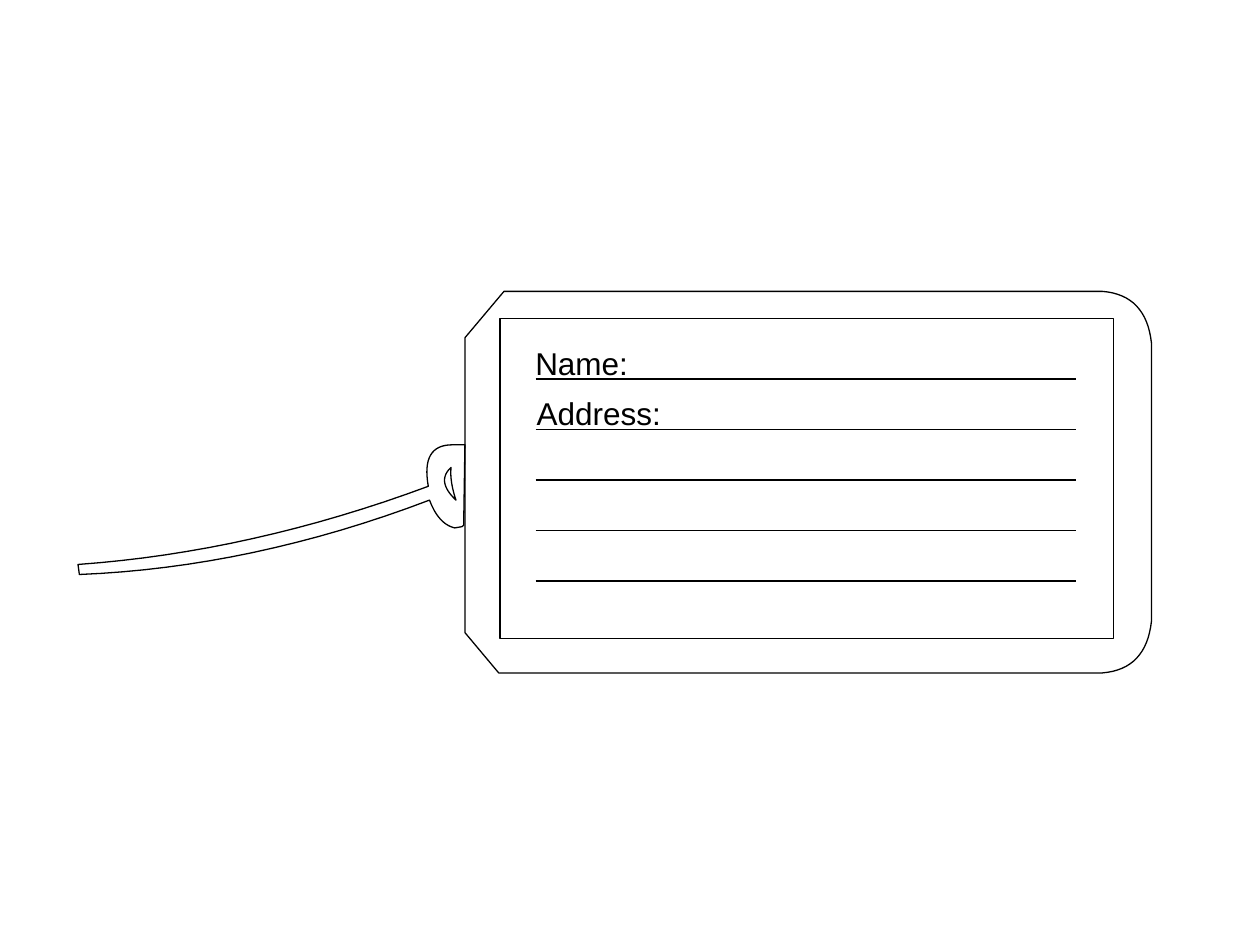
from lxml.etree import SubElement
from pptx import Presentation
from pptx.dml.color import RGBColor
from pptx.enum.shapes import MSO_CONNECTOR, MSO_SHAPE
from pptx.enum.text import MSO_AUTO_SIZE
from pptx.oxml.ns import qn
from pptx.util import Pt

INK = "000000"
HAIRLINE = 0
RULE_LEFT, RULE_RIGHT = 306, 615
FIRST_RULE, RULE_GAP, RULE_COUNT = 216.7, 28.8, 5


def color(hex_string):
    return RGBColor.from_string(hex_string)


def curve(start, control, end, steps=16):
    """Return points along a quadratic curve, both ends included."""
    fractions = [step / steps for step in range(steps + 1)]
    return [
        tuple((1 - t) ** 2 * a + 2 * t * (1 - t) * b + t ** 2 * c
              for a, b, c in zip(start, control, end))
        for t in fractions
    ]


def style_outline(shape, width):
    shape.shadow.inherit = False
    shape.fill.background()
    shape.line.color.rgb = color(INK)
    shape.line.width = Pt(width)


def add_outline(page, *contours):
    """Draw closed contours, given as lists of points, as one unfilled shape."""
    builder = None
    for contour in contours:
        first, *rest = [(Pt(x), Pt(y)) for x, y in contour]
        if builder is None:
            builder = page.shapes.build_freeform(*first, scale=1.0)
        else:
            builder.move_to(*first)
        builder.add_line_segments(rest, close=True)
    style_outline(builder.convert_to_shape(), HAIRLINE)


def add_panel(page, left, top, width, height):
    panel = page.shapes.add_shape(
        MSO_SHAPE.RECTANGLE, Pt(left), Pt(top), Pt(width), Pt(height))
    style_outline(panel, HAIRLINE)


def add_rule(page, y):
    rule = page.shapes.add_connector(
        MSO_CONNECTOR.STRAIGHT, Pt(RULE_LEFT), Pt(y), Pt(RULE_RIGHT), Pt(y))
    rule.line.color.rgb = color(INK)
    rule.line.width = Pt(1)
    SubElement(rule._element.spPr, qn("a:effectLst"))


def add_text(page, text, *, left, top, width, height, size=18, font="Arial", ink=INK):
    box = page.shapes.add_textbox(Pt(left), Pt(top), Pt(width), Pt(height))
    frame = box.text_frame
    frame.word_wrap = True
    frame.auto_size = MSO_AUTO_SIZE.SHAPE_TO_FIT_TEXT
    span = frame.paragraphs[0].add_run()
    span.text = text
    span.font.size = Pt(size)
    span.font.name = font
    span.font.color.rgb = color(ink)


def add_tag(page):
    left, top, right, bottom = 265.7, 166.5, 658, 384.5
    corner_x, corner_y = 630, 29.5
    # Control points lie inside the sharp corner to give a near-circular arc.
    upper_corner = curve((corner_x, top), (655, top + 2), (right, top + corner_y))
    lower_corner = curve((right, bottom - corner_y), (655, bottom - 2), (corner_x, bottom))
    cut_corners = [(285, bottom), (left, 361.5), (left, 193), (288, top)]
    add_outline(page, upper_corner + lower_corner + cut_corners)


def add_strap(page):
    loop_top, loop_bottom = (244.8, 277.9), (245.5, 285.8)
    tip_top, tip_bottom = (44.6, 322.6), (45.4, 328.3)
    strap = (
        curve(loop_top, (240.5, 254.2), (258.5, 254.2))
        + [(265.7, 254.2), (265, 300.2), (264, 301)]
        + curve((259.9, 301.7), (250.6, 299.5), loop_bottom)
        + curve(loop_bottom, (144, 324.4), tip_bottom)
        + curve(tip_top, (144, 315.4), loop_top)
    )
    hole_top, hole_bottom = (257.8, 267.1), (260.6, 285.8)
    hole = (curve(hole_top, (249.1, 275), hole_bottom)
            + curve(hole_bottom, (257, 275), hole_top))
    add_outline(page, strap, hole)


def main():
    deck = Presentation()
    deck.slide_width, deck.slide_height = Pt(720), Pt(540)
    page = deck.slides.add_slide(deck.slide_layouts[6])

    add_tag(page)
    add_strap(page)
    add_panel(page, 285.8, 182.2, 350.6, 182.9)
    for index in range(RULE_COUNT):
        add_rule(page, FIRST_RULE + index * RULE_GAP)
    add_text(page, "Name:", left=298.8, top=193, width=74.2, height=28.8)
    add_text(page, "Address:", left=299.5, top=221.8, width=94.3, height=28.8)

    deck.save("out.pptx")


if __name__ == "__main__":
    main()
